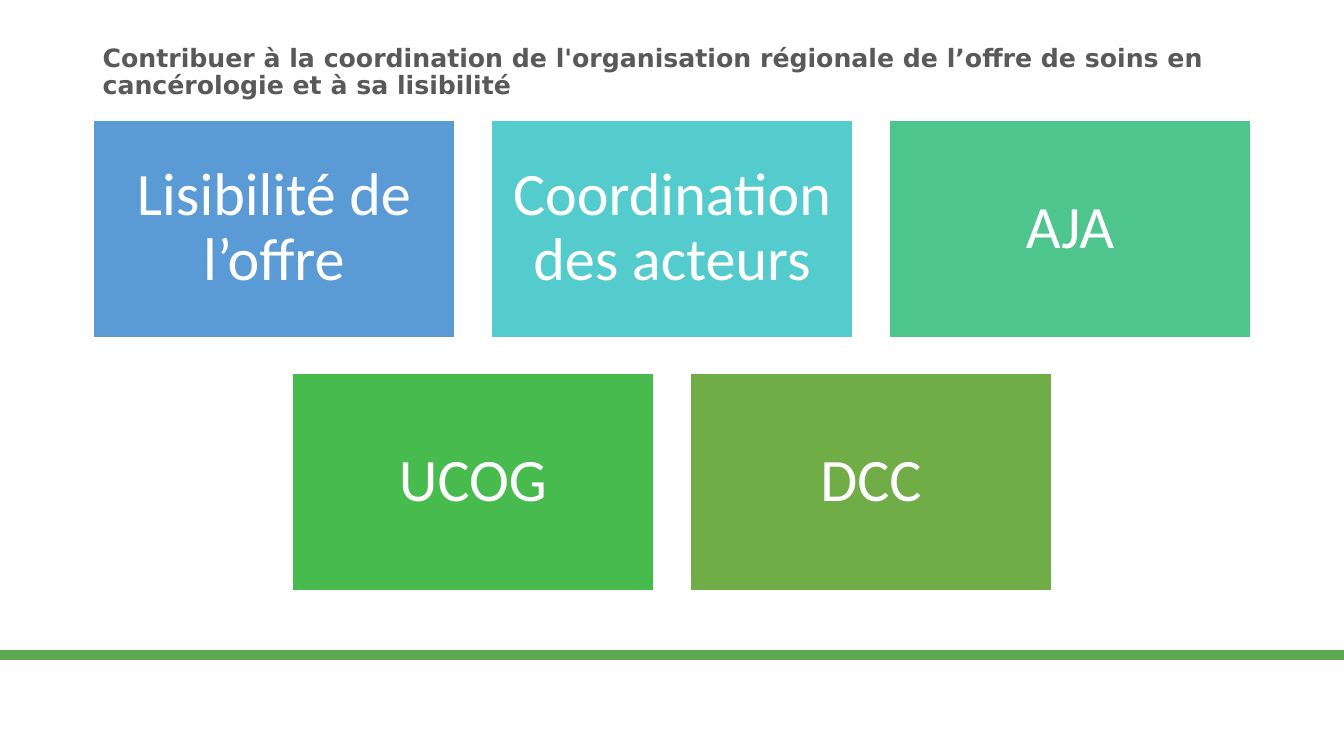
from lxml.etree import SubElement
from pptx import Presentation
from pptx.dml.color import RGBColor
from pptx.enum.shapes import MSO_CONNECTOR as Connector, MSO_SHAPE as Shape
from pptx.enum.text import MSO_ANCHOR as Anchor, PP_ALIGN as Align
from pptx.oxml.ns import qn
from pptx.util import Pt

PAGE_WIDTH, PAGE_HEIGHT = 960, 540
TILE_WIDTH, TILE_HEIGHT, TILE_GAP = 258.5, 155.1, 25.85
TILES_TOP = 86
TITLE = ("Contribuer à la coordination de l'organisation régionale "
         "de l’offre de soins en cancérologie et à sa lisibilité")
TILE_ROWS = [
    [("Lisibilité de l’offre", "5B9BD5"),
     ("Coordination des acteurs", "54CCCD"),
     ("AJA", "4DC58D")],
    [("UCOG", "48BB4F"), ("DCC", "70AD47")],
]


def colour(code):
    return RGBColor.from_string(code)


class Painter:
    title_font = "DejaVu Sans"
    tile_font = "Calibri"
    white = "FFFFFF"
    grey = "595959"
    green = "5EA853"

    def __init__(self, page):
        self.page = page

    def add_text(self, frame, text, font, size, ink, align, inset, bold=False):
        frame.word_wrap = True
        frame.margin_left = frame.margin_right = Pt(inset[0])
        frame.margin_top = frame.margin_bottom = Pt(inset[1])
        para = frame.paragraphs[0]
        para.alignment = align
        para.line_spacing = 0.9
        span = para.add_run()
        span.text = text
        span.font.name = font
        span.font.size = Pt(size)
        span.font.bold = bold
        span.font.color.rgb = colour(ink)

    def title(self, text, left, top, width, height):
        box = self.page.shapes.add_textbox(Pt(left), Pt(top), Pt(width), Pt(height))
        box.text_frame.vertical_anchor = Anchor.TOP
        self.add_text(box.text_frame, text, self.title_font, 18, self.grey,
                      Align.LEFT, (7.2, 3.6), bold=True)

    def tile(self, text, fill, left, top):
        box = self.page.shapes.add_shape(
            Shape.RECTANGLE, Pt(left), Pt(top), Pt(TILE_WIDTH), Pt(TILE_HEIGHT))
        box.shadow.inherit = False
        box.fill.solid()
        box.fill.fore_color.rgb = colour(fill)
        box.line.color.rgb = colour(self.white)
        box.line.width = Pt(1)
        box.text_frame.vertical_anchor = Anchor.MIDDLE
        self.add_text(box.text_frame, text, self.tile_font, 43, self.white,
                      Align.CENTER, (13, 13))

    def rule(self, top, width):
        line = self.page.shapes.add_connector(
            Connector.STRAIGHT, 0, Pt(top), Pt(PAGE_WIDTH), Pt(top))
        line.line.color.rgb = colour(self.green)
        line.line.width = Pt(width)
        SubElement(line._element.spPr, qn("a:effectLst"))


def main():
    deck = Presentation()
    deck.slide_width, deck.slide_height = Pt(PAGE_WIDTH), Pt(PAGE_HEIGHT)
    painter = Painter(deck.slides.add_slide(deck.slide_layouts[6]))

    painter.rule(468, 7)
    painter.title(TITLE, 66.24, 28.8, 828, 66.24)
    for row, tiles in enumerate(TILE_ROWS):
        row_width = len(tiles) * (TILE_WIDTH + TILE_GAP) - TILE_GAP
        row_left = (PAGE_WIDTH - row_width) / 2
        top = TILES_TOP + row * (TILE_HEIGHT + TILE_GAP)
        for column, (text, fill) in enumerate(tiles):
            left = row_left + column * (TILE_WIDTH + TILE_GAP)
            painter.tile(text, fill, left, top)

    deck.save("out.pptx")


if __name__ == "__main__":
    main()
